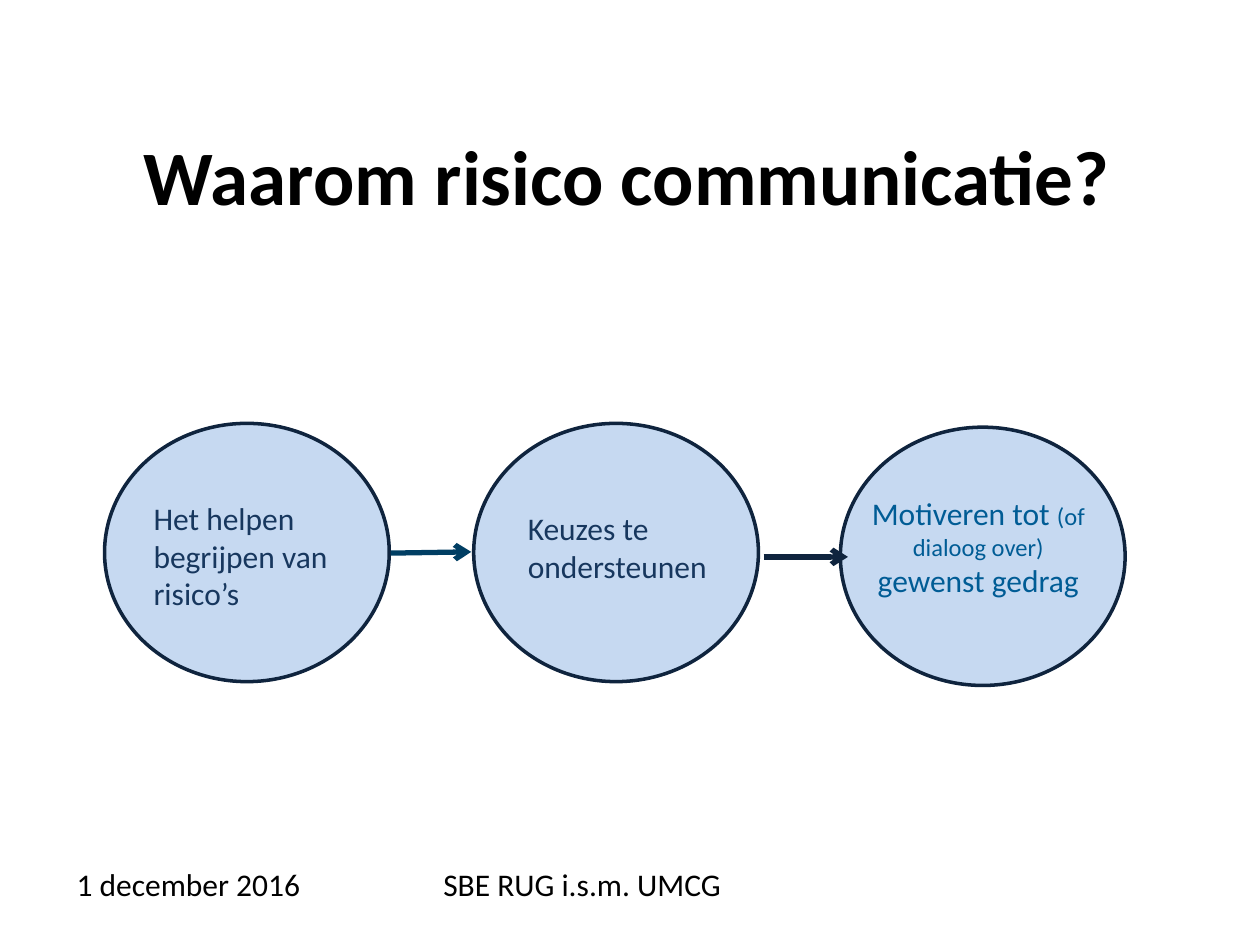
from lxml.etree import SubElement
from pptx import Presentation
from pptx.dml.color import RGBColor
from pptx.enum.shapes import MSO_CONNECTOR, MSO_SHAPE
from pptx.enum.text import MSO_ANCHOR, PP_ALIGN
from pptx.oxml.ns import qn
from pptx.util import Inches, Pt

COLUMNS, ROWS = 100, 75
SLIDE_WIDTH, SLIDE_HEIGHT = Inches(10), Inches(7.5)
FONT = "Calibri"
BLACK, NAVY, DARK_BLUE, BLUE, TEAL, PALE_BLUE = (
    "000000", "0F243E", "17375E", "005C95", "003E63", "C6D9F1")
CIRCLE_SIZE = (22.6, 20.5)
CIRCLES = [(8.3, 33.6), (37.6, 33.6), (66.7, 33.9)]


def color(value):
    return RGBColor.from_string(value)


def across(columns):
    return round(SLIDE_WIDTH * columns / COLUMNS)


def down(rows):
    return round(SLIDE_HEIGHT * rows / ROWS)


def place(left, top, width, height):
    return across(left), down(top), across(width), down(height)


def add_circle(slide, left, top):
    shape = slide.shapes.add_shape(MSO_SHAPE.OVAL, *place(left, top, *CIRCLE_SIZE))
    shape.shadow.inherit = False
    shape.fill.solid()
    shape.fill.fore_color.rgb = color(PALE_BLUE)
    shape.line.color.rgb = color(NAVY)
    shape.line.width = Pt(2)


def add_text(slide, area, paragraphs, text_color=BLACK, bold=False,
             alignment=PP_ALIGN.LEFT, anchor=MSO_ANCHOR.TOP):
    text_frame = slide.shapes.add_textbox(*place(*area)).text_frame
    text_frame.word_wrap = True
    text_frame.vertical_anchor = anchor
    for index, runs in enumerate(paragraphs):
        paragraph = text_frame.add_paragraph() if index else text_frame.paragraphs[0]
        paragraph.alignment = alignment
        for text, size in runs:
            run = paragraph.add_run()
            run.text = text
            run.font.name = FONT
            run.font.size = Pt(size)
            run.font.bold = bold
            run.font.color.rgb = color(text_color)


def add_arrow(slide, start, end, line_color):
    connector = slide.shapes.add_connector(
        MSO_CONNECTOR.STRAIGHT,
        across(start[0]), down(start[1]), across(end[0]), down(end[1]))
    connector.line.color.rgb = color(line_color)
    connector.line.width = Pt(3)
    SubElement(connector.line._get_or_add_ln(), qn("a:tailEnd"), type="arrow")
    SubElement(connector._element.spPr, qn("a:effectLst"))


def main():
    presentation = Presentation()
    presentation.slide_width = SLIDE_WIDTH
    presentation.slide_height = SLIDE_HEIGHT
    slide = presentation.slides.add_slide(presentation.slide_layouts[6])

    add_text(slide, (5.1, 9.2, 89.4, 9.4), [[("Waarom risico communicatie?", 44)]],
             bold=True, alignment=PP_ALIGN.CENTER, anchor=MSO_ANCHOR.MIDDLE)

    for left, top in CIRCLES:
        add_circle(slide, left, top)

    add_text(slide, (11.2, 39.1, 16.5, 10),
             [[("Het helpen begrijpen van risico’s", 18)]], DARK_BLUE)
    add_text(slide, (40.9, 39.9, 20.1, 7),
             [[("Keuzes te ondersteunen", 18)]], DARK_BLUE)
    add_text(slide, (67.5, 38.7, 20.3, 12.4),
             [[("Motiveren tot ", 18), ("(of dialoog over)", 14)],
              [("gewenst gedrag", 18)]],
             BLUE, alignment=PP_ALIGN.CENTER)

    add_arrow(slide, (31, 43.9), (37.4, 43.8), TEAL)
    add_arrow(slide, (60.6, 44.2), (67.3, 44.2), NAVY)

    add_text(slide, (5.1, 68.2, 23.3, 4), [[("1 december 2016", 18)]])
    add_text(slide, (34.2, 68.2, 31.7, 4), [[("SBE RUG i.s.m. UMCG", 18)]])

    presentation.save("out.pptx")


if __name__ == "__main__":
    main()
